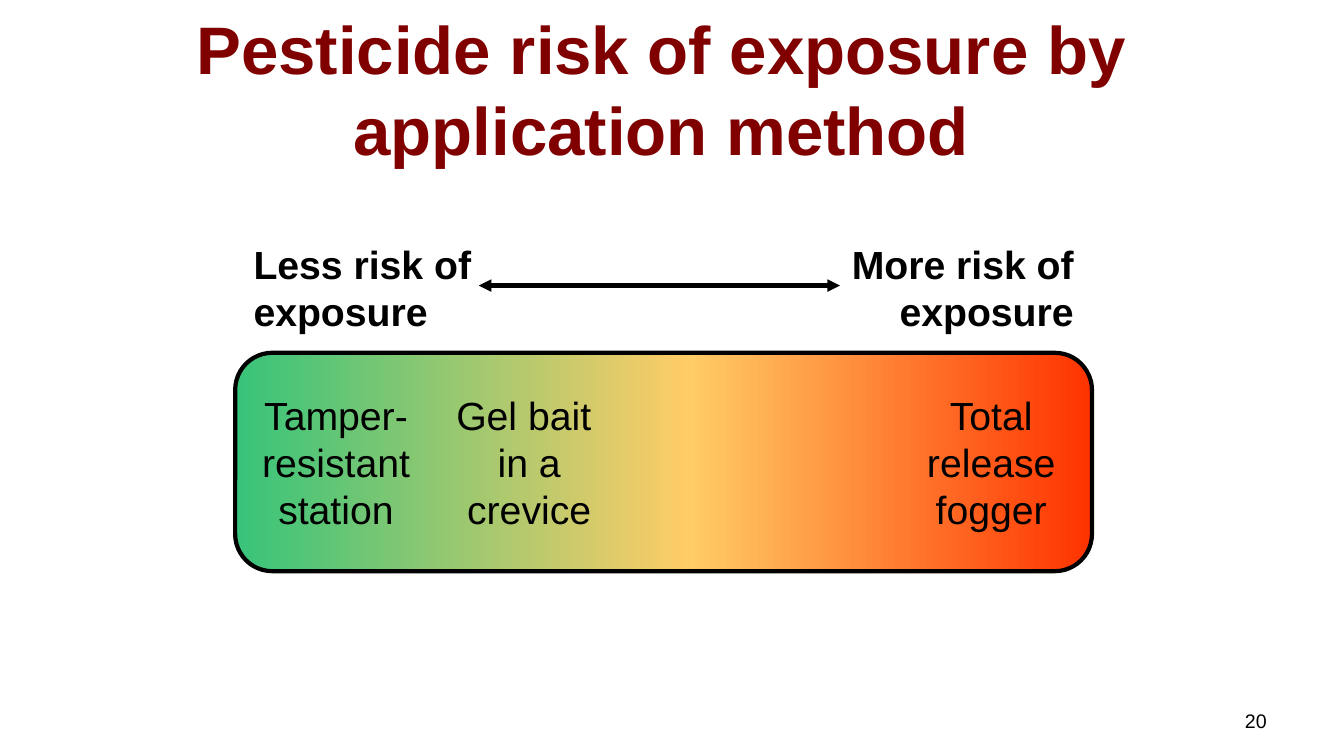
import copy

import lxml.etree
import pptx
import pptx.dml.color
import pptx.enum.shapes
import pptx.enum.text
import pptx.oxml.ns
import pptx.util

Pt = pptx.util.Pt
qn = pptx.oxml.ns.qn
ALIGN = pptx.enum.text.PP_ALIGN
ANCHOR = pptx.enum.text.MSO_ANCHOR
COLORS = {
    "title": "800000",
    "ink": "000000",
    "low": "37C47A",
    "medium": "FFCC66",
    "high": "FF3300",
}
RISK_STOPS = [(0, "low"), (0.53, "medium"), (1, "high")]
SCALE_LEFT, SCALE_TOP, SCALE_WIDTH, SCALE_HEIGHT = 168, 252, 612, 156
METHODS = [
    (168, ["Tamper- resistant station"]),
    (306, ["Gel bait ", "in a crevice"]),
    (636, ["Total release fogger"]),
]
RISK_LABELS = [
    (174, "Less risk of exposure", ALIGN.LEFT),
    (576, "More risk of exposure", ALIGN.RIGHT),
]


def rgb(name):
    return pptx.dml.color.RGBColor.from_string(COLORS[name])


def write_text(shape, lines, size, alignment, color="ink", bold=False, anchor=ANCHOR.TOP):
    frame = shape.text_frame
    frame.word_wrap = True
    frame.auto_size = pptx.enum.text.MSO_AUTO_SIZE.NONE
    frame.vertical_anchor = anchor
    paragraph = frame.paragraphs[0]
    paragraph.alignment = alignment
    for index, line in enumerate(lines):
        if index:
            paragraph.add_line_break()
        run = paragraph.add_run()
        run.text = line
        run.font.name = "Arial"
        run.font.size = Pt(size)
        run.font.bold = bold
        run.font.color.rgb = rgb(color)


def add_title(slide, text):
    title = slide.shapes.title
    title.left, title.top, title.width, title.height = Pt(0), Pt(24), Pt(945), Pt(78)
    write_text(title, [text], 48, ALIGN.CENTER, "title", True, ANCHOR.MIDDLE)


def add_label(slide, left, top, width, height, lines, size, alignment, **style):
    box = slide.shapes.add_textbox(Pt(left), Pt(top), Pt(width), Pt(height))
    write_text(box, lines, size, alignment, **style)


def add_risk_scale(slide):
    scale = slide.shapes.add_shape(
        pptx.enum.shapes.MSO_SHAPE.ROUNDED_RECTANGLE,
        Pt(SCALE_LEFT), Pt(SCALE_TOP), Pt(SCALE_WIDTH), Pt(SCALE_HEIGHT),
    )
    scale.shadow.inherit = False
    scale.adjustments[0] = 0.17
    scale.line.color.rgb = rgb("ink")
    scale.line.width = Pt(3)
    scale.fill.gradient()
    scale.fill.gradient_angle = 0
    stop_list = scale.element.spPr.find(".//" + qn("a:gsLst"))
    stop_list.insert(1, copy.deepcopy(stop_list[0]))
    for stop, (position, color) in zip(scale.fill.gradient_stops, RISK_STOPS):
        stop.position = position
        stop.color.rgb = rgb(color)


def add_double_arrow(slide, left, right, top):
    arrow = slide.shapes.add_connector(
        pptx.enum.shapes.MSO_CONNECTOR.STRAIGHT, Pt(left), Pt(top), Pt(right), Pt(top)
    )
    arrow.line.color.rgb = rgb("ink")
    arrow.line.width = Pt(3)
    properties = arrow.element.spPr
    line = properties.find(qn("a:ln"))
    for tag in ("a:headEnd", "a:tailEnd"):
        lxml.etree.SubElement(line, qn(tag), type="triangle")
    lxml.etree.SubElement(properties, qn("a:effectLst"))


def main():
    presentation = pptx.Presentation()
    presentation.slide_width = Pt(960)
    presentation.slide_height = Pt(540)
    slide = presentation.slides.add_slide(presentation.slide_layouts[5])
    add_title(slide, "Pesticide risk of exposure by application method")
    add_label(slide, 688, 500, 224, 29, ["20"], 14, ALIGN.RIGHT, anchor=ANCHOR.MIDDLE)
    add_risk_scale(slide)
    for left, lines in METHODS:
        add_label(slide, left, 276, 144, 109, lines, 28, ALIGN.CENTER)
    for left, text, alignment in RISK_LABELS:
        add_label(slide, left, 168, 198, 75, [text], 28, alignment, bold=True)
    add_double_arrow(slide, 342, 600, 204)
    presentation.save("out.pptx")


if __name__ == "__main__":
    main()
